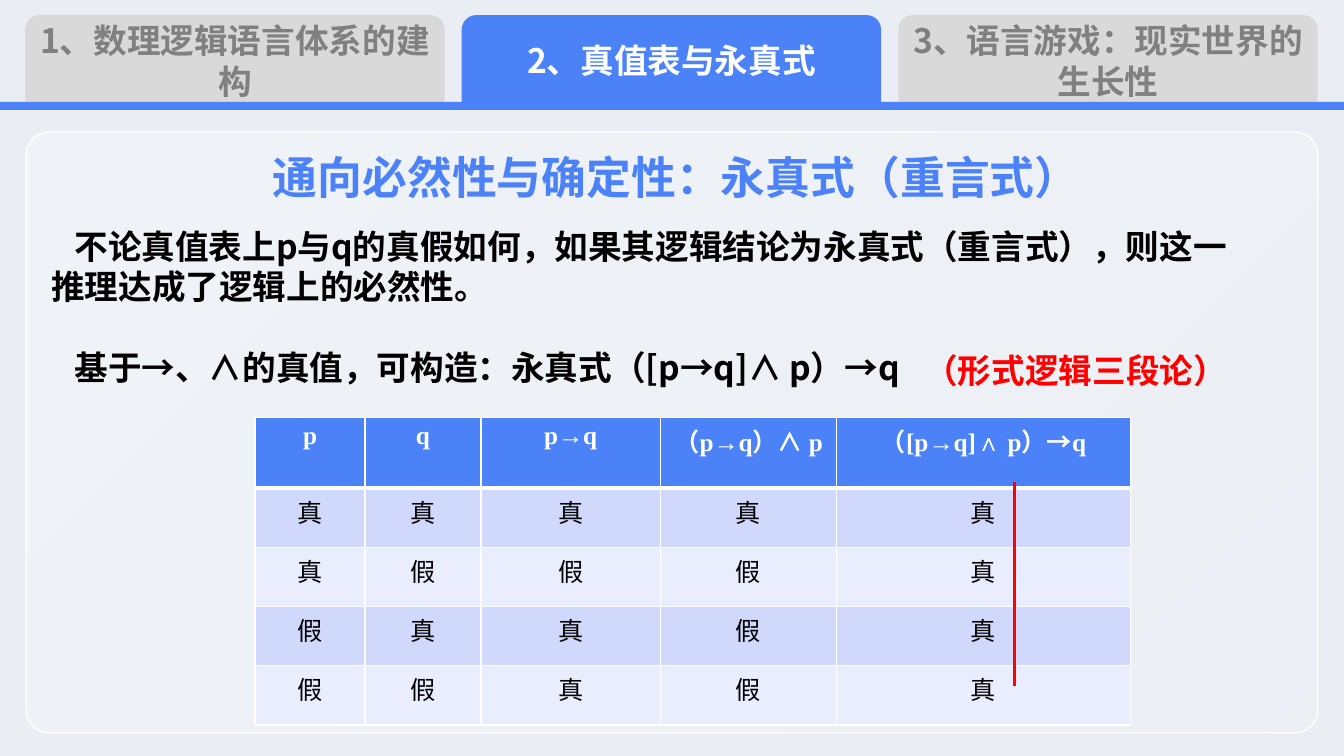
from dataclasses import dataclass

from lxml.etree import SubElement
from pptx import Presentation
from pptx.dml.color import RGBColor
from pptx.enum.shapes import MSO_CONNECTOR, MSO_SHAPE
from pptx.enum.text import MSO_ANCHOR, MSO_AUTO_SIZE, PP_ALIGN
from pptx.oxml import parse_xml
from pptx.oxml.ns import nsdecls, qn
from pptx.util import Inches, Pt


@dataclass(frozen=True)
class Theme:
    background: str = "EAEEF4"
    accent: str = "4B82F8"
    white: str = "FFFFFF"
    black: str = "000000"
    red: str = "FF0000"
    tab: str = "D9D9D9"
    tab_text: str = "808080"
    bands: tuple = ("D0D8FC", "E9EDFE")
    font: str = "Noto Sans CJK SC"
    table_font: str = "Times New Roman"
    title_size: int = 32
    body_size: int = 24
    table_size: int = 18


def set_attributes(target, values):
    for name, value in values.items():
        setattr(target, name, value)


def box(left, top, width, height):
    return [Inches(length) for length in (left, top, width, height)]


class SlideBuilder:
    def __init__(self, slide, theme):
        self.slide = slide
        self.theme = theme

    def paint(self, fill, color):
        fill.solid()
        fill.fore_color.rgb = RGBColor.from_string(color)

    def add_styled_run(self, paragraph, text, color, size, bold=True, font=None, **layout):
        """Put one styled run in the paragraph; layout holds paragraph formats."""
        set_attributes(paragraph, layout)
        run = paragraph.add_run()
        run.text = text
        set_attributes(run.font, {"size": Pt(size), "bold": bold,
                                  "name": font or self.theme.font})
        run.font.color.rgb = RGBColor.from_string(color)
        SubElement(run.font._element, qn("a:ea"), typeface=self.theme.font)

    def title(self, text, place):
        """Fill the title placeholder and bring it in front of the shapes so far."""
        shape = self.slide.shapes.title
        set_attributes(shape, dict(zip(("left", "top", "width", "height"), box(*place))))
        set_attributes(shape.text_frame, {"word_wrap": True,
                                          "auto_size": MSO_AUTO_SIZE.NONE,
                                          "vertical_anchor": MSO_ANCHOR.MIDDLE})
        self.add_styled_run(shape.text_frame.paragraphs[0], text, self.theme.accent,
                            self.theme.title_size, alignment=PP_ALIGN.CENTER,
                            line_spacing=0.9)
        self.slide.shapes._spTree.append(shape._element)

    def text(self, paragraphs, place, color, indent=0, gap=0):
        """Add a text box with a first-line indent and a gap between paragraphs."""
        frame = self.slide.shapes.add_textbox(*box(*place)).text_frame
        set_attributes(frame, {"word_wrap": True,
                               "auto_size": MSO_AUTO_SIZE.SHAPE_TO_FIT_TEXT})
        for index, text in enumerate(paragraphs):
            paragraph = frame.add_paragraph() if index else frame.paragraphs[0]
            self.add_styled_run(paragraph, text, color, self.theme.body_size,
                                space_before=Pt(gap if index else 0))
            paragraph._p.get_or_add_pPr().set("indent", str(Inches(indent)))

    def shape(self, kind, place, color, text="", text_color=None):
        shape = self.slide.shapes.add_shape(kind, *box(*place))
        shape.shadow.inherit = False
        self.paint(shape.fill, color)
        shape.line.fill.background()
        if text:
            set_attributes(shape.text_frame, {"word_wrap": True,
                                              "vertical_anchor": MSO_ANCHOR.MIDDLE})
            self.add_styled_run(shape.text_frame.paragraphs[0], text, text_color,
                                self.theme.body_size, alignment=PP_ALIGN.CENTER)
        return shape

    def panel(self, place):
        """Add the rounded panel with a see-through white gradient."""
        panel = self.shape(MSO_SHAPE.ROUNDED_RECTANGLE, place, self.theme.white)
        panel.adjustments[0] = 0.038
        panel.fill.gradient()
        panel.fill.gradient_angle = 315
        for stop in panel.fill.gradient_stops:
            stop.color.rgb = RGBColor.from_string(self.theme.white)
        colors = list(panel._element.spPr.find(qn("a:gradFill")).iter(qn("a:srgbClr")))
        for color, opacity in zip(colors, (30, 10)):
            SubElement(color, qn("a:alpha"), val=str(opacity * 1000))
        self.paint(panel.line.fill, self.theme.white)
        panel.line.width = Pt(1)

    def borders(self, cell, widths):
        properties = cell._tc.get_or_add_tcPr()
        for index, (side, width) in enumerate(zip("LRTB", widths)):
            properties.insert(index, parse_xml(
                f'<a:ln{side} {nsdecls("a")} w="{Pt(width)}"><a:solidFill>'
                f'<a:srgbClr val="{self.theme.white}"/></a:solidFill></a:ln{side}>'))

    def table(self, rows, place, column_widths):
        theme = self.theme
        table = self.slide.shapes.add_table(len(rows), len(column_widths),
                                            *box(*place)).table
        for column, width in zip(table.columns, column_widths):
            column.width = Inches(width)
        for row_index, values in enumerate(rows):
            header = row_index == 0
            fill = theme.accent if header else theme.bands[(row_index - 1) % 2]
            for column_index, value in enumerate(values):
                cell = table.cell(row_index, column_index)
                self.paint(cell.fill, fill)
                self.borders(cell, (1, 1, 3 if row_index == 1 else 1, 3 if header else 1))
                self.add_styled_run(cell.text_frame.paragraphs[0], value,
                                    theme.white if header else theme.black,
                                    theme.table_size, header, theme.table_font,
                                    alignment=PP_ALIGN.CENTER)

    def line(self, start, end, color, width):
        connector = self.slide.shapes.add_connector(
            MSO_CONNECTOR.STRAIGHT, *box(*start, *end))
        self.paint(connector.line.fill, color)
        connector.line.width = Pt(width)
        SubElement(connector._element.spPr, qn("a:effectLst"))


def main():
    theme = Theme()
    presentation = Presentation()
    set_attributes(presentation, {"slide_width": Inches(13.33),
                                  "slide_height": Inches(7.5)})
    slide = presentation.slides.add_slide(presentation.slide_layouts[5])
    builder = SlideBuilder(slide, theme)
    builder.paint(slide.background.fill, theme.background)

    builder.panel((0.26, 1.31, 12.81, 5.96))
    builder.title("通向必然性与确定性：永真式（重言式）", (0.41, 1.36, 12.6, 0.85))
    builder.text(
        ["不论真值表上p与q的真假如何，如果其逻辑结论为永真式（重言式），则这一推理达成了逻辑上的必然性。",
         "基于→、∧的真值，可构造：永真式（[p→q]∧ p）→q"],
        (0.41, 2.19, 12.05, 2.32), theme.black, indent=0.23, gap=29)
    truth_table = [
        ("p", "q", "p→q", "（p→q）∧ p", "（[p→q]∧ p）→q"),
        "真真真真真",
        "真假假假真",
        "假真真假真",
        "假假真假真",
    ]
    builder.table(truth_table, (2.53, 4.14, 8.67, 2.94), (1.09, 1.15, 1.78, 1.75, 2.91))
    builder.line((10.06, 4.78), (10.06, 6.81), theme.red, 2.5)
    builder.text(["（形式逻辑三段论）"], (9.07, 3.42, 3.33, 0.5), theme.red)

    tabs = ("1、数理逻辑语言体系的建构", "2、真值表与永真式", "3、语言游戏：现实世界的生长性")
    active_tab = 1
    for index, label in enumerate(tabs):
        fill, color = ((theme.accent, theme.white) if index == active_tab
                       else (theme.tab, theme.tab_text))
        builder.shape(MSO_SHAPE.ROUND_2_SAME_RECTANGLE,
                      (0.25 + 4.33 * index, 0.15, 4.16, 0.86), fill, label, color)
    builder.shape(MSO_SHAPE.RECTANGLE, (0, 1.01, 13.33, 0.08), theme.accent)

    presentation.save("out.pptx")


if __name__ == "__main__":
    main()
